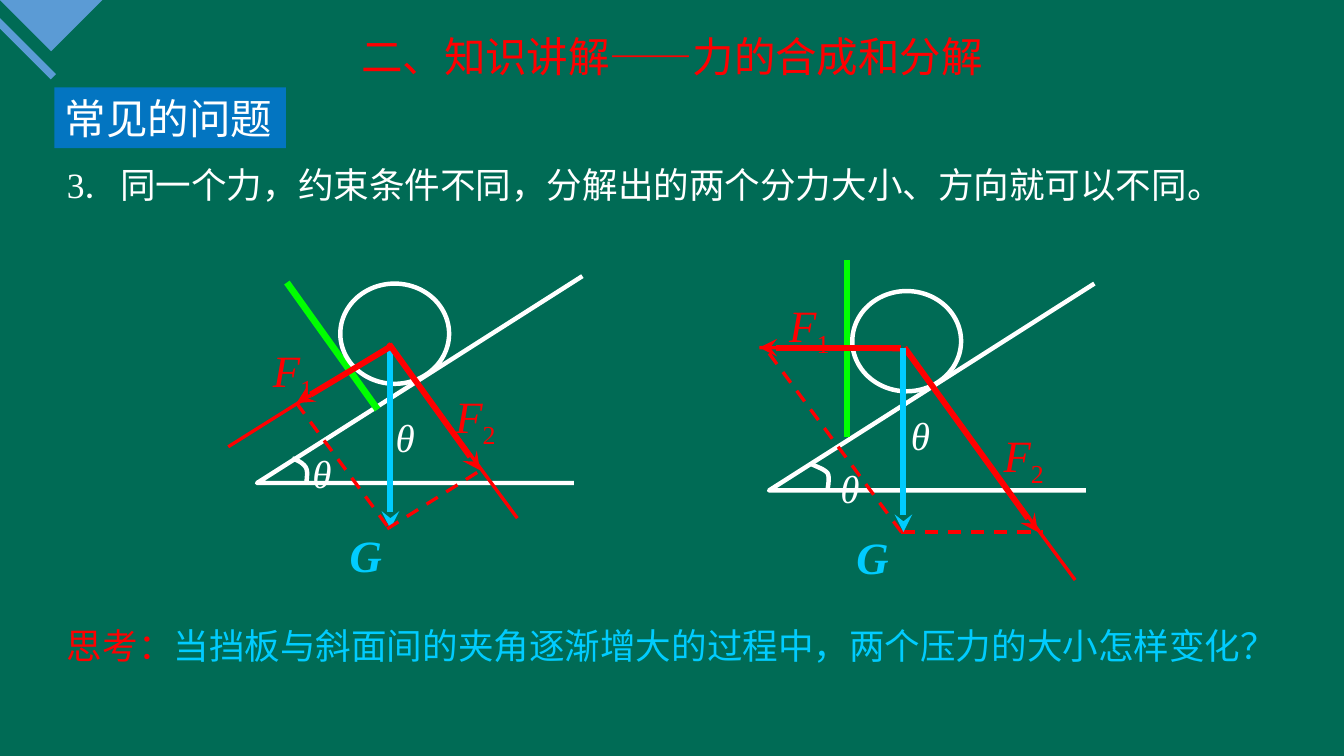
import pptx
import pptx.dml.color
import pptx.enum.dml
import pptx.enum.shapes
import pptx.enum.text
import pptx.oxml.ns
import pptx.util
from lxml import etree

Inches = pptx.util.Inches
Pt = pptx.util.Pt
RGB = pptx.dml.color.RGBColor
qn = pptx.oxml.ns.qn
SHAPE = pptx.enum.shapes.MSO_SHAPE
ALIGN = pptx.enum.text.PP_ALIGN

GREEN = RGB(0x00, 0x6B, 0x55)
CORNER_BLUE = RGB(0x5B, 0x9B, 0xD5)
TAG_BLUE = RGB(0x03, 0x75, 0xC1)
WHITE = RGB(0xFF, 0xFF, 0xFF)
RED = RGB(0xFF, 0x00, 0x00)
CYAN = RGB(0x00, 0xCC, 0xFF)
LIME = RGB(0x00, 0xFF, 0x00)

HEI = "Noto Sans CJK SC"
TIMES = "Times New Roman"
TITLE = {"size": Pt(28), "name": HEI}
BODY = {"size": Pt(24), "name": HEI}
NUMBER = {"size": Pt(24), "name": TIMES}
ANGLE = {"size": Pt(26.4), "name": TIMES, "italic": True}
FORCE = {"size": Pt(30.2), "name": TIMES, "italic": True}
GRAVITY = {**FORCE, "bold": True}
INDEX = {**FORCE, "italic": False}


def write(sp, runs, align=ALIGN.LEFT, spacing=None, wrap=True, inset=0.05):
    """Fill a shape with one paragraph of (text, format, colour) runs."""
    tf = sp.text_frame
    frame = {"word_wrap": wrap, "margin_top": Inches(inset),
             "vertical_anchor": pptx.enum.text.MSO_ANCHOR.TOP,
             "auto_size": pptx.enum.text.MSO_AUTO_SIZE.SHAPE_TO_FIT_TEXT}
    for key, value in frame.items():
        setattr(tf, key, value)
    p = tf.paragraphs[0]
    p.alignment = align
    p.line_spacing = spacing
    for text, fmt, color in runs:
        r = p.add_run()
        r.text = text
        for key, value in fmt.items():
            setattr(r.font, key, value)
        r.font.color.rgb = color
        rpr = r.font._element
        etree.SubElement(rpr, qn("a:ea")).set("typeface", fmt["name"])
        if fmt is INDEX:
            rpr.set("baseline", "-25000")


def add_text(s, box, runs, **layout):
    write(s.shapes.add_textbox(*map(Inches, box)), runs, **layout)


def add_label(s, x, y, w, *runs):
    add_text(s, (x, y, w, 0.6), runs, spacing=1.2, wrap=False, inset=0.09)


def add_line(s, start, end, color, width, dash=False, arrow=False):
    sp = s.shapes.add_connector(pptx.enum.shapes.MSO_CONNECTOR.STRAIGHT,
                                *map(Inches, (*start, *end)))
    sp.line.color.rgb = color
    sp.line.width = Pt(width)
    if dash:
        sp.line.dash_style = pptx.enum.dml.MSO_LINE.DASH
    if arrow:
        etree.SubElement(sp.line._get_or_add_ln(), qn("a:tailEnd")).set("type", "stealth")
    etree.SubElement(sp._element.spPr, qn("a:effectLst"))


def paint(sp, fill=None, line=None):
    sp.shadow.inherit = False
    if fill is None:
        sp.fill.background()
    else:
        sp.fill.solid()
        sp.fill.fore_color.rgb = fill
    if line is None:
        sp.line.fill.background()
    else:
        sp.line.color.rgb = line
        sp.line.width = Pt(3)


def add_outline(s, points, close=False, **colors):
    first, *rest = [tuple(map(Inches, pt)) for pt in points]
    fb = s.shapes.build_freeform(*first)
    fb.add_line_segments(rest, close=close)
    paint(fb.convert_to_shape(), **colors)


def bezier(a, b, c, d, steps=8):
    """Points along a cubic curve, without its start."""
    return [tuple((1 - t)**3 * i + 3 * t * (1 - t)**2 * j + 3 * t * t * (1 - t) * k + t**3 * m
                  for i, j, k, m in zip(a, b, c, d))
            for t in (n / steps for n in range(1, steps + 1))]


def add_angle_arc(s, start, c1, c2, mid, c3, c4, end):
    points = [start, *bezier(start, c1, c2, mid), *bezier(mid, c3, c4, end)]
    add_outline(s, points, line=WHITE)


def add_incline(s, x, y, board):
    """Slope, baffle board and ball, with the slope's box starting at x, y."""
    add_outline(s, [(x + 2.97, y + 1.94), (x, y + 1.94), (x + 3.05, y)], line=WHITE)
    add_line(s, *board, LIME, 4.5)
    ball = s.shapes.add_shape(SHAPE.OVAL, *map(Inches, (x + 0.78, y + 0.07, 1.02, 0.94)))
    paint(ball, line=WHITE)


def add_extension(s, start, end):
    add_line(s, start, end, RED, 2.25)


def add_dashes(s, start, end):
    add_line(s, start, end, RED, 2.25, dash=True)


def add_force(s, start, end, color=RED):
    add_line(s, start, end, color, 4, arrow=True)


def add_labels(s, gravity, f1, f2, *angles):
    add_label(s, *gravity, 0.51, ("G", GRAVITY, CYAN))
    for number, place in (("1", f1), ("2", f2)):
        add_label(s, *place, 0.6, ("F", FORCE, RED), (number, INDEX, RED))
    for place in angles:
        add_label(s, *place, 0.38, ("θ", ANGLE, WHITE))


def add_tilted_board_figure(s):
    add_incline(s, 2.41, 2.59, ((2.69, 2.65), (3.54, 3.84)))
    add_force(s, (3.66, 3.23), (3.66, 4.96), CYAN)
    add_extension(s, (3.67, 3.23), (2.14, 4.19))
    add_extension(s, (3.64, 3.22), (4.85, 4.86))
    add_force(s, (3.65, 3.23), (4.5, 4.41))
    add_dashes(s, (2.78, 3.78), (3.65, 4.96))
    add_dashes(s, (3.63, 4.96), (4.54, 4.39))
    add_force(s, (3.68, 3.24), (2.78, 3.78))
    add_angle_arc(s, (2.74, 4.3), (2.8, 4.32), (2.85, 4.35), (2.87, 4.39),
                  (2.89, 4.43), (2.87, 4.52), (2.87, 4.54))
    add_labels(s, (3.18, 4.76), (2.46, 3.01), (4.17, 3.44), (3.61, 3.7), (2.83, 4.04))


def add_upright_board_figure(s):
    add_extension(s, (8.48, 3.28), (10.08, 5.44))
    add_extension(s, (8.45, 3.28), (7.12, 3.26))
    add_incline(s, 7.21, 2.66, ((7.94, 2.44), (7.94, 4.1)))
    add_angle_arc(s, (7.6, 4.35), (7.66, 4.38), (7.73, 4.4), (7.76, 4.44),
                  (7.78, 4.48), (7.76, 4.57), (7.76, 4.59))
    add_dashes(s, (8.45, 4.99), (9.78, 4.99))
    add_dashes(s, (8.45, 4.99), (7.17, 3.26))
    add_force(s, (8.48, 3.26), (9.73, 4.99))
    add_force(s, (8.45, 3.26), (7.12, 3.26))
    add_force(s, (8.47, 3.26), (8.47, 4.99), CYAN)
    add_labels(s, (7.93, 4.78), (7.3, 2.59), (9.31, 3.81), (8.44, 3.68), (7.78, 4.18))


def add_corner(s):
    add_outline(s, [(0.48, 0.48), (0.96, 0), (0, 0)], close=True, fill=CORNER_BLUE)
    add_line(s, (-0.12, 0.1), (0.5, 0.72), CORNER_BLUE, 5)


def add_section_tag(s):
    sp = s.shapes.add_shape(SHAPE.RECTANGLE, *map(Inches, (0.51, 0.82, 2.17, 0.57)))
    paint(sp, fill=TAG_BLUE)
    write(sp, [("常见的问题", TITLE, WHITE)], wrap=False)


def main():
    prs = pptx.Presentation()
    prs.slide_width, prs.slide_height = Inches(12.6), Inches(7.09)
    s = prs.slides.add_slide(prs.slide_layouts[6])
    s.background.fill.solid()
    s.background.fill.fore_color.rgb = GREEN

    add_corner(s)
    add_text(s, (0, 0.24, 12.6, 0.57),
             [("二、知识讲解——力的合成和分解", TITLE, RED)], align=ALIGN.CENTER)
    add_section_tag(s)
    add_text(s, (0.53, 1.4, 11.56, 0.59),
             [("3．", NUMBER, WHITE),
              ("同一个力，约束条件不同，分解出的两个分力大小、方向就可以不同。", BODY, WHITE)],
             align=ALIGN.JUSTIFY, spacing=1.2)
    add_tilted_board_figure(s)
    add_upright_board_figure(s)
    add_text(s, (0.53, 5.6, 11.56, 0.64),
             [("思考：", BODY, RED),
              ("当挡板与斜面间的夹角逐渐增大的过程中，两个压力的大小怎样变化？", BODY, CYAN)],
             align=ALIGN.JUSTIFY, spacing=1.5)
    prs.save("out.pptx")


if __name__ == "__main__":
    main()
